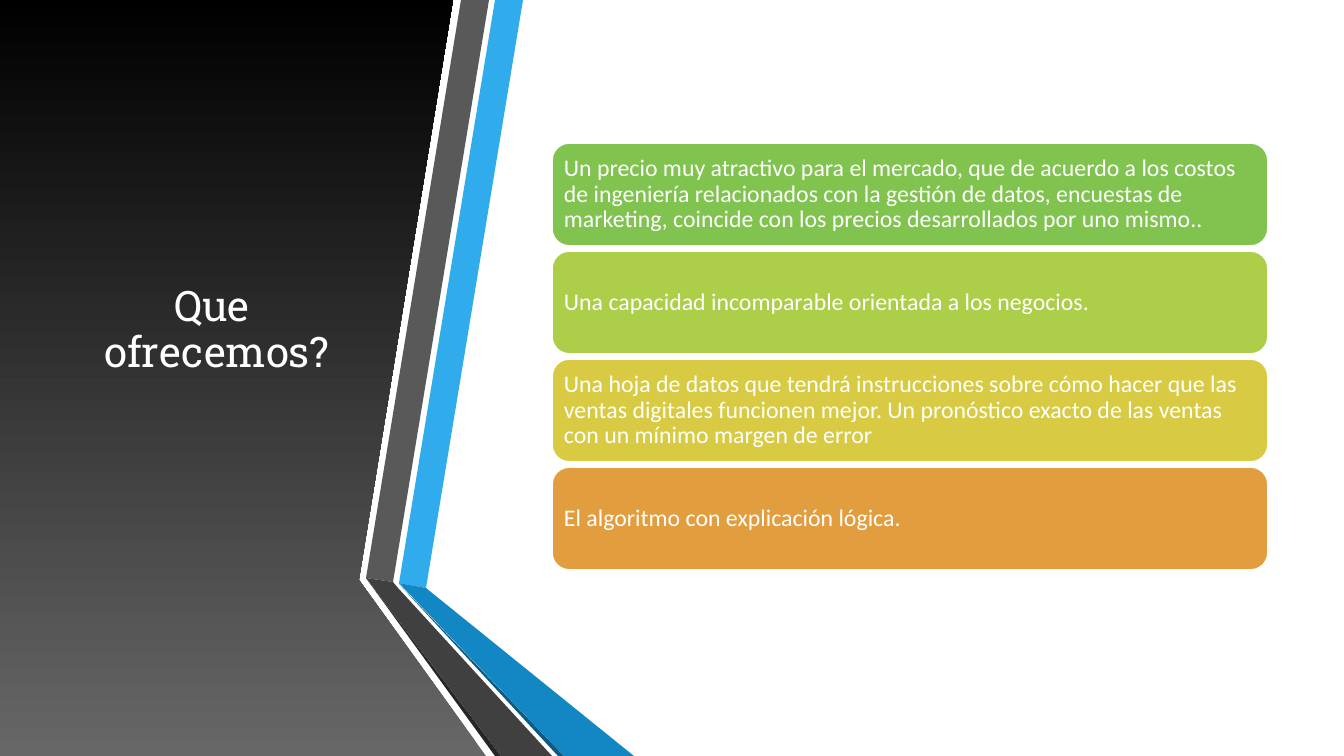
from pptx import Presentation
from pptx.dml.color import RGBColor
from pptx.enum.shapes import MSO_SHAPE
from pptx.enum.text import MSO_ANCHOR, MSO_AUTO_SIZE, PP_ALIGN
from pptx.util import Pt

ROUNDED = MSO_SHAPE.ROUNDED_RECTANGLE
MIDDLE = MSO_ANCHOR.MIDDLE
NO_FIT = MSO_AUTO_SIZE.NONE
CENTER, LEFT = PP_ALIGN.CENTER, PP_ALIGN.LEFT

SLIDE = (1344, 756)
EMU_PER_PX = 914400 / 100.8

TITLE = "Que \vofrecemos?"
TITLE_BOX = (-15, 50, 464, 562)
TITLE_FONT = {"name": "Roboto Slab", "size": Pt(30)}

PANEL = [(0, 0), (453, 0), (359, 580), (486, 756), (0, 756)]
PANEL_STOPS = ["676767", "000000"]

RIBBONS = [
    ("30ACEC", [(399, 583), (426, 588), (523, 0), (495, 0)]),
    ("595959", [(489, 0), (461, 0), (366, 578), (393, 582)]),
    ("262626", [(366, 578), (495, 756), (501, 756)]),
    ("0C5A82", [(399, 584), (558, 756), (564, 756)]),
    ("1287C3", [(399, 583), (564, 756), (634, 756), (426, 588)]),
    ("404040", [(552, 756), (398, 588), (393, 582), (366, 578), (501, 756)]),
]

CARDS = [
    ("80C34F", "Un precio muy atractivo para el mercado, que de acuerdo a los costos "
               "de ingeniería relacionados con la gestión de datos, encuestas de "
               "marketing, coincide con los precios desarrollados por uno mismo.."),
    ("ADCE49", "Una capacidad incomparable orientada a los negocios."),
    ("D8CB43", "Una hoja de datos que tendrá instrucciones sobre cómo hacer que las "
               "ventas digitales funcionen mejor. Un pronóstico exacto de las ventas "
               "con un mínimo margen de error"),
    ("E29D3E", "El algoritmo con explicación lógica."),
]
CARD_LEFT, CARD_TOP, CARD_W, CARD_H = 552, 143, 716, 103
CARD_PITCH = 108
CARD_INSET = 7
CARD_FONT = {"name": "Calibri", "size": Pt(17)}


def px(n):
    return round(n * EMU_PER_PX)


def rgb(value):
    return RGBColor.from_string(value)


def polygon(shapes, points):
    builder = shapes.build_freeform(*points[0], scale=EMU_PER_PX)
    builder.add_line_segments(points[1:], close=True)
    sp = builder.convert_to_shape()
    sp.shadow.inherit = False
    sp.line.fill.background()
    return sp


def write(sp, text, font, align):
    tf = sp.text_frame
    tf.text = text
    tf.word_wrap = True
    tf.auto_size = NO_FIT
    tf.vertical_anchor = MIDDLE
    p = tf.paragraphs[0]
    p.alignment = align
    p.line_spacing = 0.9
    for r in p.runs:
        for key, value in font.items():
            setattr(r.font, key, value)
        r.font.color.rgb = rgb("FFFFFF")
    return tf


def main():
    prs = Presentation()
    prs.slide_width, prs.slide_height = map(px, SLIDE)
    slide = prs.slides.add_slide(prs.slide_layouts[5])
    shapes = slide.shapes

    panel = polygon(shapes, PANEL)
    panel.fill.gradient()
    panel.fill.gradient_angle = 90
    for stop, color in zip(panel.fill.gradient_stops, PANEL_STOPS):
        stop.color.rgb = rgb(color)

    title = shapes.title
    title.left, title.top, title.width, title.height = map(px, TITLE_BOX)
    write(title, TITLE, TITLE_FONT, CENTER)
    panel._element.addnext(title._element)

    for color, points in RIBBONS:
        sp = polygon(shapes, points)
        sp.fill.solid()
        sp.fill.fore_color.rgb = rgb(color)

    for i, (color, text) in enumerate(CARDS):
        box = (CARD_LEFT, CARD_TOP + i * CARD_PITCH, CARD_W, CARD_H)
        sp = shapes.add_shape(ROUNDED, *map(px, box))
        sp.shadow.inherit = False
        sp.fill.solid()
        sp.fill.fore_color.rgb = rgb(color)
        sp.line.color.rgb = rgb("FFFFFF")
        sp.line.width = Pt(1.25)
        tf = write(sp, text, CARD_FONT, LEFT)
        for side in ("left", "top", "right", "bottom"):
            setattr(tf, f"margin_{side}", px(CARD_INSET))

    prs.save("out.pptx")


if __name__ == "__main__":
    main()
